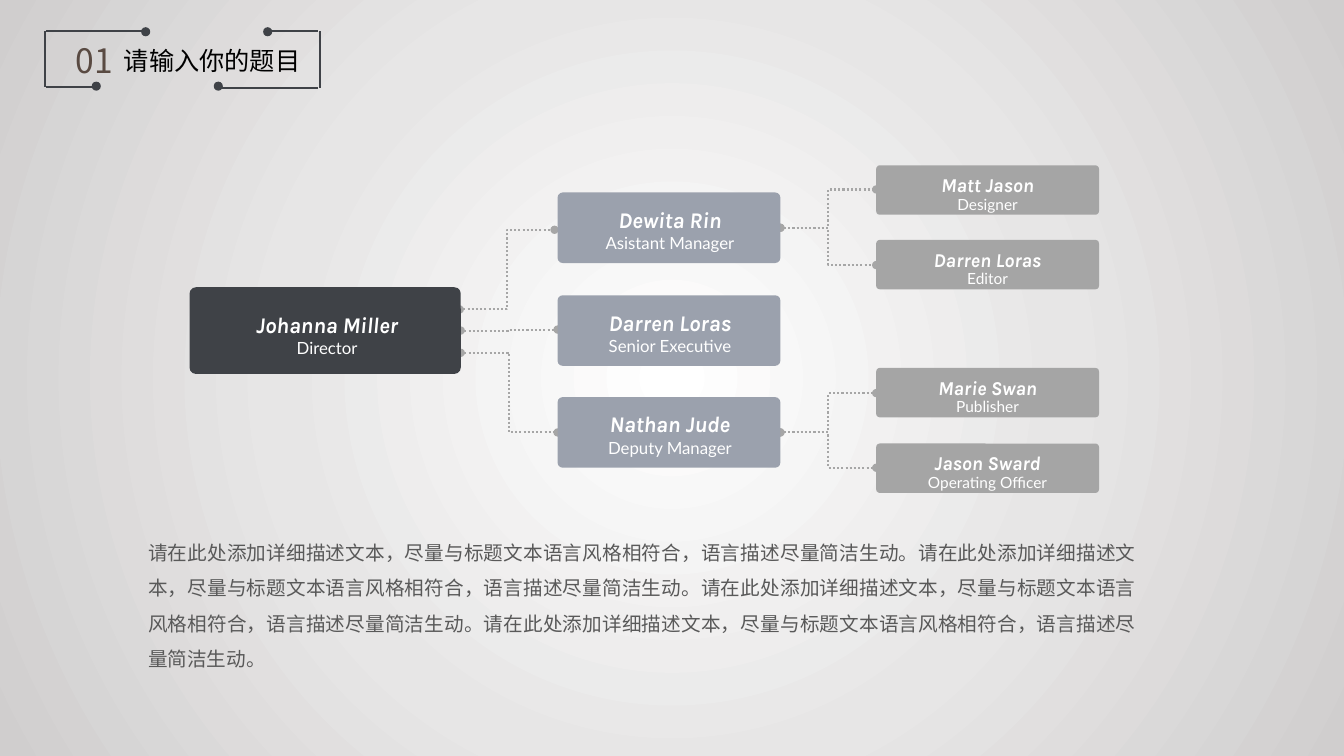
from dataclasses import dataclass
from typing import Any, NamedTuple

from lxml import etree
from pptx import Presentation
from pptx.dml.color import RGBColor
from pptx.enum.dml import MSO_LINE
from pptx.enum.shapes import MSO_CONNECTOR, MSO_SHAPE
from pptx.enum.text import MSO_ANCHOR, MSO_AUTO_SIZE, PP_ALIGN
from pptx.oxml import parse_xml
from pptx.oxml.ns import nsdecls, qn
from pptx.slide import Slide
from pptx.util import Inches, Pt

STRAIGHT, ELBOW = MSO_CONNECTOR.STRAIGHT, MSO_CONNECTOR.ELBOW
OVAL, ROUNDED = MSO_SHAPE.OVAL, MSO_SHAPE.ROUNDED_RECTANGLE
CENTER, JUSTIFY, LEFT = PP_ALIGN.CENTER, PP_ALIGN.JUSTIFY, PP_ALIGN.LEFT
TOP, MIDDLE = MSO_ANCHOR.TOP, MSO_ANCHOR.MIDDLE
GROW = MSO_AUTO_SIZE.SHAPE_TO_FIT_TEXT
DOTTED = MSO_LINE.ROUND_DOT


@dataclass(frozen=True)
class Theme:
    dark: str = "3F4247"
    slate: str = "9BA1AD"
    gray: str = "A5A5A5"
    wire: str = "A6A6A6"
    white: str = "FFFFFF"
    black: str = "000000"
    brown: str = "594A42"
    body: str = "595959"
    glow: tuple[tuple[int, str], ...] = ((0, "FFFFFF"), (51, "E7E6E6"), (100, "D0CECE"))
    number: int = 24
    title: int = 18
    text: int = 14
    stroke: float = 1.5
    spread: float = 1.5
    name_font: str = "Karla"
    role_font: str = "Lato"
    han_font: str = "Noto Sans CJK SC"


THEME = Theme()


class Box(NamedTuple):
    left: float
    top: float
    width: float
    height: float


class Line(NamedTuple):
    x1: float
    y1: float
    x2: float
    y2: float


@dataclass(frozen=True)
class Tier:
    left: float
    width: float
    height: float
    fill: str
    name_size: int
    role_size: int
    name_drop: float
    role_drop: float
    name_height: float
    role_height: float
    shift: float


@dataclass(frozen=True)
class Card:
    tier: Tier
    top: float
    name: str
    role: str
    name_width: float


LEAD = Tier(1.88, 2.69, 0.86, THEME.dark, 16, 12, 0.05, 0.35, 0.5, 0.4, 0.02)
CHIEF = Tier(5.53, 2.21, 0.7, THEME.slate, 16, 12, -0.05, 0.25, 0.5, 0.4, 0.01)
STAFF = Tier(8.69, 2.21, 0.49, THEME.gray, 14, 11, -0.09, 0.15, 0.45, 0.38, 0)
ROLE_WIDTH = 1.91

CARDS = (
    Card(STAFF, 1.64, "Matt Jason", "Designer", 1.19),
    Card(CHIEF, 1.91, "Dewita Rin", "Asistant Manager", 1.29),
    Card(CHIEF, 2.93, "Darren Loras", "Senior Executive", 1.53),
    Card(CHIEF, 3.94, "Nathan Jude", "Deputy Manager", 1.5),
    Card(LEAD, 2.85, "Johanna Miller", "Director", 1.72),
    Card(STAFF, 2.38, "Darren Loras", "Editor", 1.36),
    Card(STAFF, 3.65, "Marie Swan", "Publisher", 1.25),
    Card(STAFF, 4.4, "Jason Sward", "Operating Officer", 1.34),
)
LINKS = (
    Line(4.56, 3.07, 5.5, 2.28),
    Line(4.57, 3.5, 5.53, 4.29),
    Line(4.57, 3.28, 5.53, 3.27),
    Line(7.74, 2.26, 8.69, 1.88),
    Line(7.74, 2.26, 8.69, 2.63),
    Line(7.74, 4.29, 8.69, 3.9),
    Line(7.74, 4.29, 8.69, 4.64),
)
FRAME = (
    Line(1.42, 0.31, 0.46, 0.31),
    Line(0.45, 0.31, 0.45, 0.86),
    Line(0.46, 0.86, 0.94, 0.86),
    Line(2.19, 0.87, 3.15, 0.87),
    Line(3.17, 0.87, 3.17, 0.31),
    Line(3.15, 0.31, 2.67, 0.31),
)
DOTS = ((1.4, 0.27), (0.91, 0.81), (2.12, 0.81), (2.61, 0.27))
DOT_SIZE = 0.09
SENTENCE = "请在此处添加详细描述文本，尽量与标题文本语言风格相符合，语言描述尽量简洁生动。"


def apply(target: Any, values: dict[str, Any]) -> None:
    for key, value in values.items():
        setattr(target, key, value)


def paint_back(slide: Slide) -> None:
    slide.background.fill.solid()
    back = slide.element.find(".//" + qn("p:bgPr"))
    stops = "".join(
        f'<a:gs pos="{place * 1000}"><a:srgbClr val="{color}"/></a:gs>'
        for place, color in THEME.glow
    )
    glow = parse_xml(
        f'<a:gradFill {nsdecls("a")} rotWithShape="1"><a:gsLst>{stops}</a:gsLst>'
        '<a:path path="circle"><a:fillToRect l="50000" t="50000" r="50000" b="50000"/>'
        "</a:path></a:gradFill>"
    )
    back.replace(back.find(qn("a:solidFill")), glow)


def add_line(slide: Slide, kind: Any, line: Line, color: str, dotted: bool = False) -> None:
    wire = slide.shapes.add_connector(kind, *map(Inches, line))
    wire.line.color.rgb = RGBColor.from_string(color)
    wire.line.width = Pt(THEME.stroke)
    props = wire.element.spPr
    if dotted:
        wire.line.dash_style = DOTTED
        for end in ("a:headEnd", "a:tailEnd"):
            etree.SubElement(props.find(qn("a:ln")), qn(end), type="oval")
    etree.SubElement(props, qn("a:effectLst"))


def add_block(slide: Slide, kind: Any, box: Box, color: str) -> Any:
    block = slide.shapes.add_shape(kind, *map(Inches, box))
    block.shadow.inherit = False
    block.fill.solid()
    block.fill.fore_color.rgb = RGBColor.from_string(color)
    block.line.fill.background()
    return block


def add_text(slide: Slide, box: Box, text: str, font: str, size: int, color: str,
             align: Any = CENTER, space: float | None = THEME.spread, wrap: bool = True,
             anchor: Any = TOP, strong: bool = False) -> None:
    frame = slide.shapes.add_textbox(*map(Inches, box)).text_frame
    apply(frame, {"word_wrap": wrap, "auto_size": GROW, "vertical_anchor": anchor})
    line = frame.paragraphs[0]
    apply(line, {"alignment": align, "line_spacing": space})
    run = line.add_run()
    run.text = text
    apply(run.font, {"name": font, "size": Pt(size), "bold": strong, "italic": strong})
    run.font.color.rgb = RGBColor.from_string(color)
    etree.SubElement(run.font._element, qn("a:ea"), typeface=THEME.han_font)


def add_card(slide: Slide, card: Card) -> None:
    tier = card.tier
    block = add_block(slide, ROUNDED, Box(tier.left, card.top, tier.width, tier.height), tier.fill)
    block.adjustments[0] = 0.073
    mid = tier.left + tier.width / 2 + tier.shift
    name_box = Box(mid - card.name_width / 2, card.top + tier.name_drop,
                   card.name_width, tier.name_height)
    role_box = Box(mid - ROLE_WIDTH / 2, card.top + tier.role_drop, ROLE_WIDTH, tier.role_height)
    add_text(slide, name_box, card.name, THEME.name_font, tier.name_size, THEME.white,
             wrap=False, strong=True)
    add_text(slide, role_box, card.role, THEME.role_font, tier.role_size, THEME.white,
             anchor=MIDDLE)


def main() -> None:
    deck = Presentation()
    apply(deck, {"slide_width": Inches(13.33), "slide_height": Inches(7.5)})
    slide = deck.slides.add_slide(deck.slide_layouts[6])
    paint_back(slide)
    for line in FRAME:
        add_line(slide, STRAIGHT, line, THEME.dark)
    for left, top in DOTS:
        add_block(slide, OVAL, Box(left, top, DOT_SIZE, DOT_SIZE), THEME.dark)
    add_text(slide, Box(0.65, 0.35, 0.6, 0.5), "01", THEME.han_font, THEME.number,
             THEME.brown, LEFT, None, False)
    add_text(slide, Box(1.13, 0.4, 1.97, 0.4), "请输入你的题目", THEME.han_font, THEME.title,
             THEME.black, LEFT, None, False)
    for link in LINKS:
        add_line(slide, ELBOW, link, THEME.wire, True)
    add_text(slide, Box(1.37, 5.2, 10, 1.51), SENTENCE * 4, THEME.role_font, THEME.text,
             THEME.body, JUSTIFY)
    for card in CARDS:
        add_card(slide, card)
    deck.save("out.pptx")


if __name__ == "__main__":
    main()
